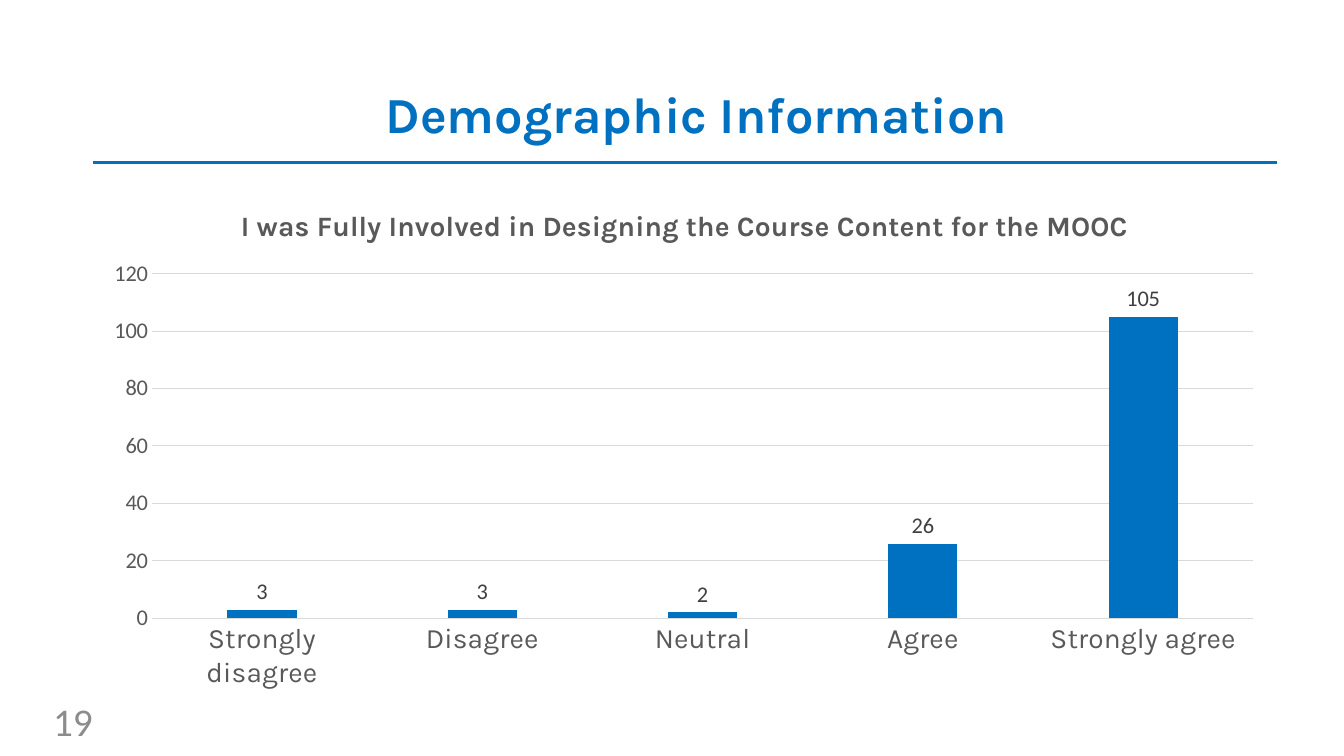
from dataclasses import dataclass

from lxml import etree
from pptx import Presentation
from pptx import util as u
from pptx.chart import data as cd
from pptx.dml.color import RGBColor
from pptx.enum import chart as ch, shapes, text
from pptx.oxml import ns

BLUE = RGBColor(0x00, 0x70, 0xC0)
GRAY = RGBColor(0x59, 0x59, 0x59)
DARK = RGBColor(0x40, 0x40, 0x40)
PALE = RGBColor(0xD9, 0xD9, 0xD9)
DIM = RGBColor(0x8C, 0x8C, 0x8C)
HEAD = "Karla"
BODY = "Calibri"


@dataclass
class Box:
    left: float
    top: float
    width: float
    height: float

    def pts(self) -> list[u.Pt]:
        return [u.Pt(v) for v in (self.left, self.top, self.width, self.height)]


@dataclass
class Axis:
    scale: object
    face: str
    size: float


def style(font, face: str, size: float, color: RGBColor, bold: bool = False) -> None:
    font.name = face
    font.size = u.Pt(size)
    font.bold = bold
    font.color.rgb = color


def write(frame, words: str, *, face: str, size: float, color: RGBColor,
          bold: bool = False, align=None, space: float | None = None) -> None:
    para = frame.paragraphs[0]
    para.alignment = align
    para.line_spacing = space
    run = para.add_run()
    run.text = words
    style(run.font, face, size, color, bold)


def rule(line, color: RGBColor, width: float) -> None:
    line.color.rgb = color
    line.width = u.Pt(width)


def draw_axis(axis: Axis) -> None:
    axis.scale.major_tick_mark = ch.XL_TICK_MARK.NONE
    axis.scale.minor_tick_mark = ch.XL_TICK_MARK.NONE
    style(axis.scale.tick_labels.font, axis.face, axis.size, GRAY)


def set_plot(chart, area: Box) -> None:
    plot = chart.plots[0]._element.getparent()
    for old in plot.findall(ns.qn("c:layout")):
        plot.remove(old)
    frame = etree.Element(ns.qn("c:layout"))
    plot.insert(0, frame)
    manual = etree.SubElement(frame, ns.qn("c:manualLayout"))
    rows = [("layoutTarget", "inner"), ("xMode", "edge"), ("yMode", "edge"),
            ("x", area.left), ("y", area.top), ("w", area.width), ("h", area.height)]
    for tag, val in rows:
        etree.SubElement(manual, ns.qn(f"c:{tag}")).set("val", str(val))


def draw_chart(slide, box: Box) -> None:
    data = cd.CategoryChartData()
    data.categories = ["Strongly disagree", "Disagree", "Neutral", "Agree", "Strongly agree"]
    data.add_series("Series 1", (3, 3, 2, 26, 105))
    chart = slide.shapes.add_chart(ch.XL_CHART_TYPE.COLUMN_CLUSTERED, *box.pts(), data).chart
    chart.has_legend = False
    chart.font.name = BODY
    chart.font.size = u.Pt(10)
    write(chart.chart_title.text_frame,
          "I was Fully Involved in Designing the Course Content for the MOOC",
          face=HEAD, size=20, color=GRAY, bold=True)
    chart.chart_title.include_in_layout = False

    cats, vals = chart.category_axis, chart.value_axis
    for axis in (Axis(cats, HEAD, 20), Axis(vals, BODY, 16)):
        draw_axis(axis)
    rule(cats.format.line, PALE, 0.75)
    vals.format.line.fill.background()
    rule(vals.major_gridlines.format.line, PALE, 0.75)
    vals.minimum_scale, vals.maximum_scale, vals.major_unit = 0, 120, 20

    plot = chart.plots[0]
    plot.vary_by_categories = False
    plot.gap_width = 219
    plot.overlap = -27
    bars = plot.series[0]
    bars.format.fill.solid()
    bars.format.fill.fore_color.rgb = BLUE
    tags = bars.data_labels
    tags.show_value = True
    tags.position = ch.XL_LABEL_POSITION.OUTSIDE_END
    style(tags.font, BODY, 16, DARK)
    set_plot(chart, Box(0.05, 0.17, 0.93, 0.67))


def main() -> None:
    deck = Presentation()
    deck.slide_width, deck.slide_height = u.Pt(960), u.Pt(540)
    slide = deck.slides.add_slide(deck.slide_layouts[5])

    title = slide.shapes.title
    title.left, title.top, title.width, title.height = Box(50.4, 31.7, 894.2, 104.4).pts()
    title.text_frame.vertical_anchor = text.MSO_ANCHOR.MIDDLE
    write(title.text_frame, "Demographic Information", face=HEAD, size=36, color=BLUE,
          bold=True, align=text.PP_ALIGN.CENTER, space=0.9)

    line = slide.shapes.add_connector(shapes.MSO_CONNECTOR.STRAIGHT,
                                      u.Pt(66.2), u.Pt(116), u.Pt(912.2), u.Pt(116))
    rule(line.line, BLUE, 2)
    etree.SubElement(line._element.spPr, ns.qn("a:effectLst"))

    page = slide.shapes.add_textbox(*Box(-142.6, 500.4, 216, 28.8).pts()).text_frame
    page.word_wrap = True
    page.vertical_anchor = text.MSO_ANCHOR.MIDDLE
    write(page, "19", face=BODY, size=28, color=DIM, align=text.PP_ALIGN.RIGHT)

    draw_chart(slide, Box(66.2, 133.2, 846, 367.2))
    deck.save("out.pptx")


if __name__ == "__main__":
    main()
